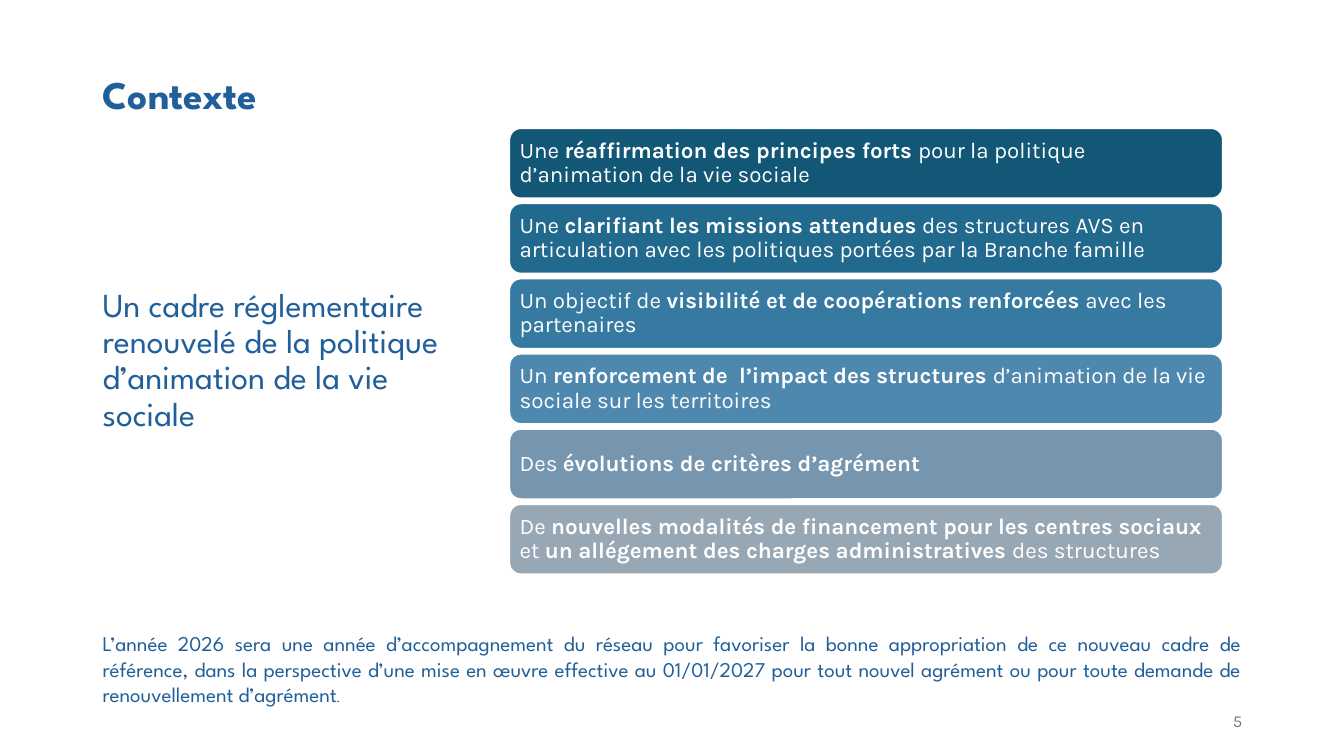
"""Build the "Contexte" slide: a renewed framework and its six guiding points."""
from dataclasses import dataclass

from pptx import Presentation
from pptx.dml.color import RGBColor
from pptx.enum.shapes import MSO_SHAPE as Shape
from pptx.enum.text import MSO_ANCHOR as Anchor, PP_ALIGN as Align
from pptx.util import Inches, Pt


@dataclass(frozen=True)
class Theme:
    heading_font: str = "League Spartan"
    body_font: str = "Karla"
    blue: str = "215F9A"
    grey: str = "797979"
    black: str = "000000"
    white: str = "FFFFFF"
    bars: tuple = ("135776", "22698E", "3679A1", "4F88AF", "7696AF", "98A7B4")
    title_size: float = 28
    subtitle_size: float = 24
    bar_size: float = 16
    note_size: float = 15
    number_size: float = 12
    stop_size: float = 8.8


theme = Theme()


def style(font, name, size, color, bold=False):
    font.name, font.size, font.bold = name, Pt(size), bold
    font.color.rgb = RGBColor.from_string(color)


def add_text(page, left, top, width, height, text, anchor=Anchor.MIDDLE):
    box = page.shapes.add_textbox(Inches(left), Inches(top), Inches(width), Inches(height))
    box.text_frame.word_wrap = True
    box.text_frame.vertical_anchor = anchor
    para = box.text_frame.paragraphs[0]
    para.add_run().text = text
    return para


deck = Presentation()
deck.slide_width, deck.slide_height = Inches(13.33), Inches(7.5)
page = deck.slides.add_slide(deck.slide_layouts[6])

title = add_text(page, 0.92, 0.5, 11.5, 0.93, "Contexte")
title.line_spacing = 0.9
style(title.font, theme.heading_font, theme.title_size, theme.blue, bold=True)

subtitle = add_text(page, 0.92, 1.61, 3.54, 3.94,
                    "Un cadre réglementaire renouvelé de la politique d’animation de la vie sociale")
subtitle.line_spacing = 0.9
style(subtitle.font, theme.heading_font, theme.subtitle_size, theme.blue)

# Each point alternates regular and bold spans, starting with regular.
points = [
    ["Une ", "réaffirmation des principes forts ",
     "pour la politique d’animation de la vie sociale"],
    ["Une ", "clarifiant les missions attendues",
     " des structures AVS en articulation avec les politiques portées par la Branche famille"],
    ["Un objectif de ", "visibilité et de coopérations renforcées ", "avec les partenaires"],
    ["Un ", "renforcement de  l’impact des structures ",
     "d’animation de la vie sociale sur les territoires"],
    ["Des ", "évolutions de critères d’agrément"],
    ["De ", "nouvelles modalités de financement pour les centres sociaux ",
     "et ", "un allégement des charges administratives ", "des structures"],
]
bar_top, bar_pitch = 1.27, 0.746
for row, (color, spans) in enumerate(zip(theme.bars, points)):
    bar = page.shapes.add_shape(Shape.ROUNDED_RECTANGLE, Inches(5.05),
                                Inches(bar_top + row * bar_pitch), Inches(7.08), Inches(0.7))
    bar.shadow.inherit = False
    bar.fill.solid()
    bar.fill.fore_color.rgb = RGBColor.from_string(color)
    bar.line.color.rgb = RGBColor.from_string(theme.white)
    bar.line.width = Pt(1.5)
    frame = bar.text_frame
    frame.word_wrap = True
    frame.vertical_anchor = Anchor.MIDDLE
    frame.margin_left = frame.margin_right = Inches(0.07)
    frame.margin_top = frame.margin_bottom = Inches(0.07)
    para = frame.paragraphs[0]
    para.alignment = Align.LEFT
    para.line_spacing = 0.9
    for index, text in enumerate(spans):
        span = para.add_run()
        span.text = text
        style(span.font, theme.body_font, theme.bar_size, theme.white, bold=index % 2 == 1)

note = add_text(page, 0.92, 6.21, 11.5, 1.15,
                "L’année 2026 sera une année d’accompagnement du réseau pour favoriser la bonne "
                "appropriation de ce nouveau cadre de référence, dans la perspective d’une mise en "
                "œuvre effective au 01/01/2027 pour tout nouvel agrément ou pour toute demande de "
                "renouvellement d’agrément", Anchor.TOP)
note.alignment = Align.JUSTIFY
style(note.runs[0].font, theme.heading_font, theme.note_size, theme.blue)
stop = note.add_run()
stop.text = "."
style(stop.font, theme.body_font, theme.stop_size, theme.black)

number = add_text(page, 9.42, 6.95, 3, 0.4, "5")
number.alignment = Align.RIGHT
style(number.font, theme.body_font, theme.number_size, theme.grey)

deck.save("out.pptx")
